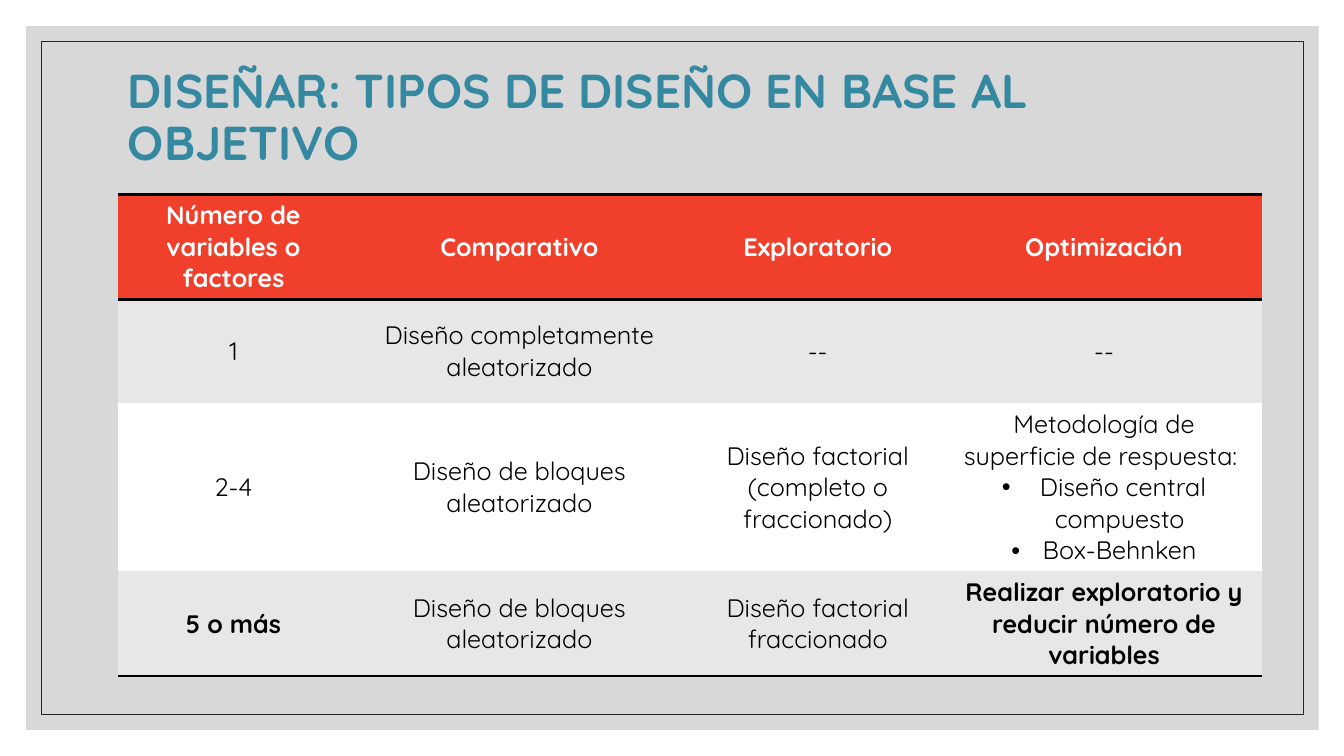
from dataclasses import dataclass
from typing import Optional

from lxml.etree import SubElement
from pptx import Presentation
from pptx.dml.color import RGBColor
from pptx.enum.shapes import MSO_SHAPE
from pptx.enum.text import MSO_ANCHOR, PP_ALIGN
from pptx.oxml.ns import qn
from pptx.util import Emu, Inches, Pt

WIDTH, HEIGHT = Inches(13.33), Inches(7.5)
FONT = "Quicksand"
RED, TEAL, BLACK, WHITE, BAND = "F03F2B", "3488A0", "000000", "FFFFFF", "E7E7E7"
PLAIN = "{2D5ABB26-0587-4C30-8999-92F81FD0307C}"  # table style without lines or fills
COLS = (17.18, 25.36, 19.05, 23.56)
ROW = 13.73


@dataclass
class Box:
    """Place and size, in percent of the slide."""
    left: float
    top: float
    width: float
    height: float

    def emu(self) -> tuple[Emu, Emu, Emu, Emu]:
        return across(self.left), down(self.top), across(self.width), down(self.height)


@dataclass
class Panel:
    box: Box
    fill: Optional[str] = None
    alpha: int = 100
    line: Optional[str] = None


@dataclass
class Row:
    cells: tuple[str, ...]
    fill: str
    color: str = BLACK
    bold: tuple[int, ...] = ()
    edges: tuple[str, ...] = ()


PANELS = (
    Panel(Box(1.95, 3.47, 96.17, 93.07), fill="BFBFBF", alpha=60),
    Panel(Box(3.08, 5.47, 93.92, 89.07), line="262626"),
)
TITLE = Box(8.78, 5.73, 86.27, 20)
GRID = Box(8.78, 25.73, sum(COLS), 4 * ROW)
ROWS = (
    Row(("Número de variables o factores", "Comparativo", "Exploratorio", "Optimización"),
        RED, WHITE, bold=(0, 1, 2, 3), edges=("T", "B")),
    Row(("1", "Diseño completamente aleatorizado", "--", "--"), BAND),
    Row(("2-4", "Diseño de bloques aleatorizado", "Diseño factorial (completo o fraccionado)",
         "Metodología de superficie de respuesta: \n• Diseño central compuesto\n•Box-Behnken"),
        WHITE),
    Row(("5 o más", "Diseño de bloques aleatorizado", "Diseño factorial fraccionado",
         "Realizar exploratorio y reducir número de variables"),
        BAND, bold=(0, 3), edges=("B",)),
)


def across(share: float) -> Emu:
    return Emu(round(WIDTH * share / 100))


def down(share: float) -> Emu:
    return Emu(round(HEIGHT * share / 100))


def rgb(code: str) -> RGBColor:
    return RGBColor.from_string(code)


def style(par, size: int, color: str, bold: bool) -> None:
    par.font.name, par.font.size, par.font.bold = FONT, Pt(size), bold
    par.font.color.rgb = rgb(color)


def draw_panel(slide, panel: Panel) -> None:
    shape = slide.shapes.add_shape(MSO_SHAPE.RECTANGLE, *panel.box.emu())
    shape.shadow.inherit = False
    if panel.fill:
        shape.fill.solid()
        shape.fill.fore_color.rgb = rgb(panel.fill)
        tint = shape.fill._xPr.find(qn("a:solidFill"))[0]
        SubElement(tint, qn("a:alpha"), val=str(panel.alpha * 1000))
    else:
        shape.fill.background()
    if panel.line:
        shape.line.color.rgb = rgb(panel.line)
        shape.line.width = Pt(0.5)
    else:
        shape.line.fill.background()


def draw_title(slide, text: str) -> None:
    frame = slide.shapes.add_textbox(*TITLE.emu()).text_frame
    frame.word_wrap = True
    frame.vertical_anchor = MSO_ANCHOR.MIDDLE
    par = frame.paragraphs[0]
    par.text, par.line_spacing = text, 0.9
    style(par, 34, TEAL, True)


def add_bullet(par) -> None:
    props = par._p.get_or_add_pPr()
    props.set("marL", str(Inches(0.31)))
    props.set("indent", str(-Inches(0.31)))
    SubElement(props, qn("a:buFont"), typeface="Arial")
    SubElement(props, qn("a:buChar"), char="•")


def add_edge(cell, side: str) -> None:
    line = SubElement(cell._tc.get_or_add_tcPr(), qn(f"a:ln{side}"), w=str(Pt(2)))
    SubElement(SubElement(line, qn("a:solidFill")), qn("a:srgbClr"), val=BLACK)


def fill_cell(cell, text: str, row: Row, bold: bool) -> None:
    """Write one cell; a line that starts with • becomes a bulleted paragraph."""
    for side in row.edges:
        add_edge(cell, side)
    cell.fill.solid()
    cell.fill.fore_color.rgb = rgb(row.fill)
    cell.vertical_anchor = MSO_ANCHOR.MIDDLE
    frame = cell.text_frame
    for pos, line in enumerate(text.split("\n")):
        par = frame.add_paragraph() if pos else frame.paragraphs[0]
        par.text = line.removeprefix("•")
        par.alignment = PP_ALIGN.CENTER
        if line.startswith("•"):
            add_bullet(par)
        style(par, 18, row.color, bold)


def draw_table(slide) -> None:
    table = slide.shapes.add_table(len(ROWS), len(COLS), *GRID.emu()).table
    table._tbl.tblPr.find(qn("a:tableStyleId")).text = PLAIN
    for col, share in zip(table.columns, COLS):
        col.width = across(share)
    for r, row in enumerate(ROWS):
        table.rows[r].height = down(ROW)
        for c, text in enumerate(row.cells):
            fill_cell(table.cell(r, c), text, row, c in row.bold)


def main() -> None:
    deck = Presentation()
    deck.slide_width, deck.slide_height = WIDTH, HEIGHT
    slide = deck.slides.add_slide(deck.slide_layouts[6])
    for panel in PANELS:
        draw_panel(slide, panel)
    draw_table(slide)
    draw_title(slide, "DISEÑAR: TIPOS DE DISEÑO EN BASE AL OBJETIVO")
    deck.save("out.pptx")


if __name__ == "__main__":
    main()
